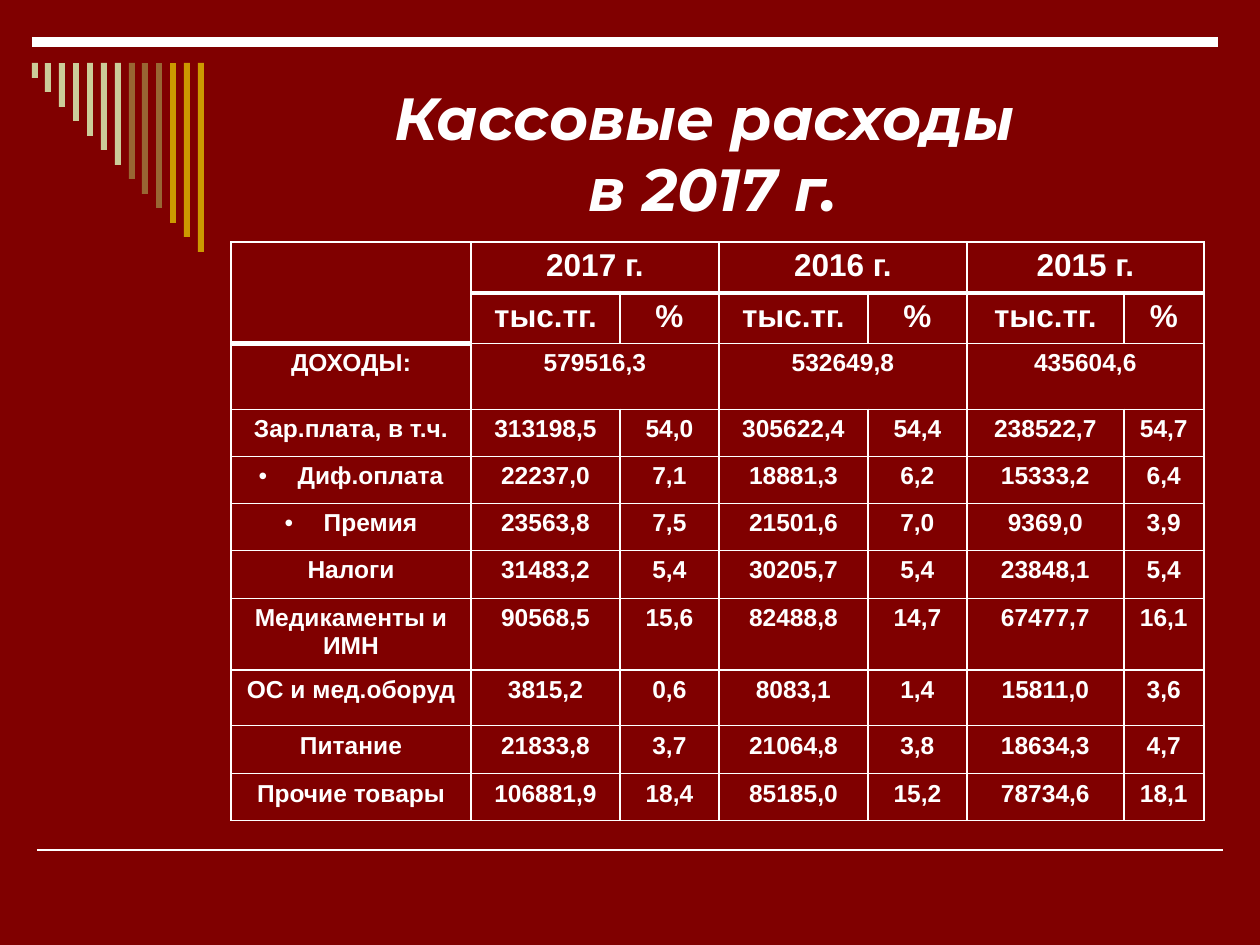
from dataclasses import dataclass

from lxml import etree
from pptx import Presentation
from pptx.dml.color import RGBColor
from pptx.enum.shapes import MSO_CONNECTOR, MSO_SHAPE
from pptx.enum.text import MSO_ANCHOR, PP_ALIGN
from pptx.oxml.ns import qn
from pptx.util import Emu, Pt

STRAIGHT = MSO_CONNECTOR.STRAIGHT
RECTANGLE = MSO_SHAPE.RECTANGLE
CENTER = PP_ALIGN.CENTER
MIDDLE = MSO_ANCHOR.MIDDLE
EMU_PER_PX = 914400 // 126


@dataclass(frozen=True)
class Theme:
    background: str = "800000"
    white: str = "FFFFFF"
    sand: str = "CCCC99"
    brown: str = "996633"
    gold: str = "CC9900"
    title_font: str = "Montserrat"
    table_font: str = "Arial"
    title_size: int = 34
    header_size: int = 18
    body_size: int = 14


theme = Theme()


def px(length):
    return Emu(length * EMU_PER_PX)


def add_run(paragraph, text, font_name, size):
    """Add a bold white run to a centred paragraph."""
    paragraph.alignment = CENTER
    run = paragraph.add_run()
    run.text = text
    run.font.name = font_name
    run.font.size = Pt(size)
    run.font.bold = True
    run.font.color.rgb = RGBColor.from_string(theme.white)
    return run


presentation = Presentation()
presentation.slide_width = px(1260)
presentation.slide_height = px(945)
slide = presentation.slides.add_slide(presentation.slide_layouts[6])
slide.background.fill.solid()
slide.background.fill.fore_color.rgb = RGBColor.from_string(theme.background)

# Rules at the foot and the head: left, right, y, width in points
for left, right, y, width in [(37, 1223, 850, 1), (32, 1218, 42, 6)]:
    rule = slide.shapes.add_connector(STRAIGHT, px(left), px(y), px(right), px(y))
    rule.line.color.rgb = RGBColor.from_string(theme.white)
    rule.line.width = Pt(width)
    etree.SubElement(rule._element.spPr, qn("a:effectLst"))

# Corner bars, growing to the right
bar_colors = [theme.sand] * 7 + [theme.brown] * 3 + [theme.gold] * 3
bars = slide.shapes.add_group_shape()
for index, color in enumerate(bar_colors):
    left = round(31.5 + 13.86 * index)
    height = round(189 * (index + 1) / len(bar_colors))
    bar = bars.shapes.add_shape(RECTANGLE, px(left), px(63), px(6), px(height))
    bar.shadow.inherit = False
    bar.fill.solid()
    bar.fill.fore_color.rgb = RGBColor.from_string(color)
    bar.line.fill.background()

# Title
title = slide.shapes.add_textbox(px(230), px(63), px(966), px(179))
title.text_frame.word_wrap = True
title.text_frame.vertical_anchor = MIDDLE
paragraph = title.text_frame.paragraphs[0]
for index, line in enumerate(["Кассовые расходы ", "в 2017 г."]):
    if index:
        paragraph.add_line_break()
    run = add_run(paragraph, line, theme.title_font, theme.title_size)
    run.font.italic = True

# Expense table
column_widths = [240, 149, 99, 149, 99, 157, 80]
row_heights = [51, 50, 66, 47, 47, 47, 48, 71, 56, 48, 47]
rows = [
    ["", "2017 г.", "", "2016 г.", "", "2015 г.", ""],
    ["", "тыс.тг.", "%", "тыс.тг.", "%", "тыс.тг.", "%"],
    ["ДОХОДЫ:", "579516,3", "", "532649,8", "", "435604,6", ""],
    ["Зар.плата, в т.ч.", "313198,5", "54,0", "305622,4", "54,4", "238522,7", "54,7"],
    ["Диф.оплата", "22237,0", "7,1", "18881,3", "6,2", "15333,2", "6,4"],
    ["Премия", "23563,8", "7,5", "21501,6", "7,0", "9369,0", "3,9"],
    ["Налоги", "31483,2", "5,4", "30205,7", "5,4", "23848,1", "5,4"],
    ["Медикаменты и ИМН", "90568,5", "15,6", "82488,8", "14,7", "67477,7", "16,1"],
    ["ОС и мед.оборуд", "3815,2", "0,6", "8083,1", "1,4", "15811,0", "3,6"],
    ["Питание", "21833,8", "3,7", "21064,8", "3,8", "18634,3", "4,7"],
    ["Прочие товары", "106881,9", "18,4", "85185,0", "15,2", "78734,6", "18,1"],
]
header_rows = 2
bulleted_rows = (4, 5)
thick_bottoms = {(1, 0)} | {(0, column) for column in range(len(column_widths))}

table = slide.shapes.add_table(
    len(rows), len(column_widths), px(231), px(242),
    px(sum(column_widths)), px(sum(row_heights)),
).table
table.first_row = False
table.horz_banding = False
for column, width in zip(table.columns, column_widths):
    column.width = px(width)
for row, height in zip(table.rows, row_heights):
    row.height = px(height)

table.cell(0, 0).merge(table.cell(1, 0))
for row_index in (0, 2):
    for column_index in (1, 3, 5):
        table.cell(row_index, column_index).merge(table.cell(row_index, column_index + 1))

for row_index, row_texts in enumerate(rows):
    size = theme.header_size if row_index < header_rows else theme.body_size
    for column_index, text in enumerate(row_texts):
        cell = table.cell(row_index, column_index)
        properties = cell._tc.get_or_add_tcPr()
        border_widths = {
            "a:lnL": 1,
            "a:lnR": 1,
            "a:lnT": 3 if (row_index - 1, column_index) in thick_bottoms else 1,
            "a:lnB": 3 if (row_index, column_index) in thick_bottoms else 1,
        }
        for side, width in border_widths.items():
            border = etree.SubElement(properties, qn(side), w=str(Pt(width)))
            border_fill = etree.SubElement(border, qn("a:solidFill"))
            etree.SubElement(border_fill, qn("a:srgbClr"), val=theme.white)
        cell.fill.solid()
        cell.fill.fore_color.rgb = RGBColor.from_string(theme.background)
        if not text:
            continue
        paragraph = cell.text_frame.paragraphs[0]
        add_run(paragraph, text, theme.table_font, size)
        if column_index == 0 and row_index in bulleted_rows:
            bullet_properties = paragraph._p.get_or_add_pPr()
            bullet_properties.set("marL", str(px(39)))
            bullet_properties.set("indent", str(px(-39)))
            etree.SubElement(bullet_properties, qn("a:buFont"), typeface=theme.table_font)
            etree.SubElement(bullet_properties, qn("a:buChar"), char="•")

presentation.save("out.pptx")
